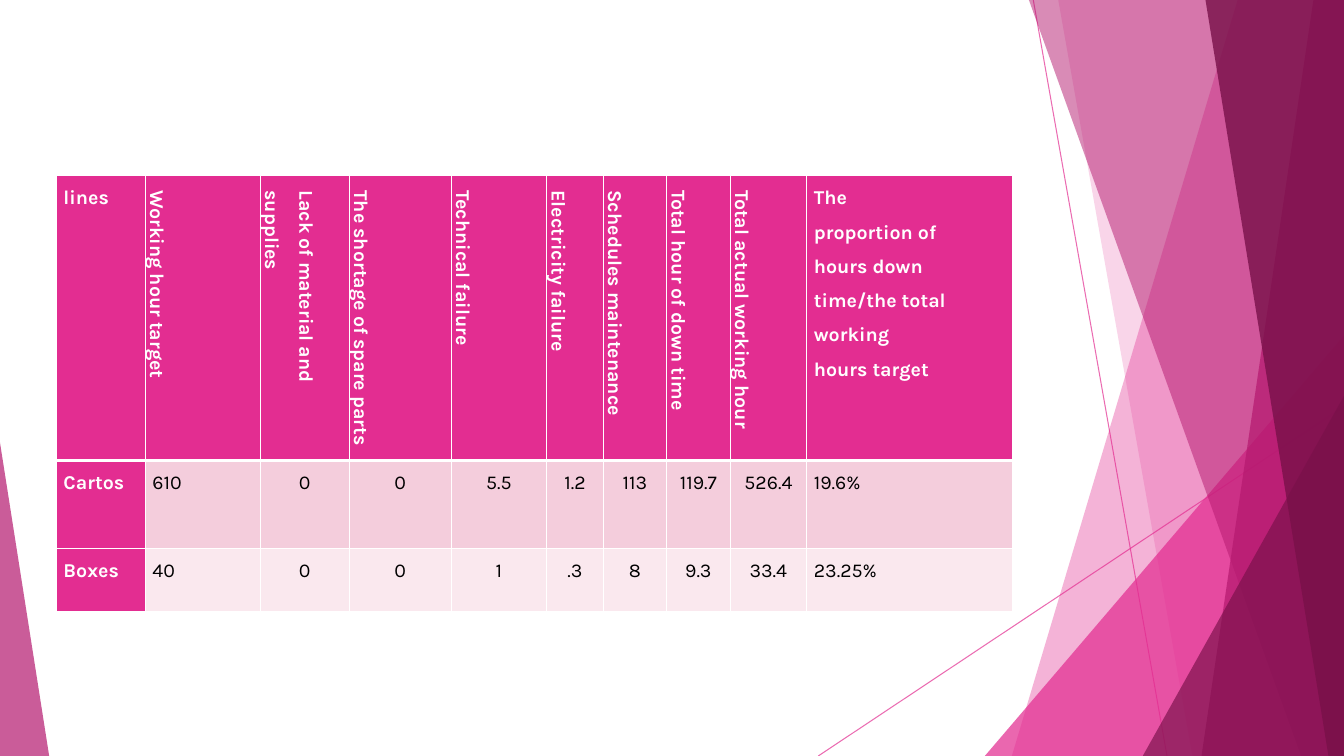
from dataclasses import dataclass

from lxml.etree import SubElement
from pptx import Presentation
from pptx.dml.color import RGBColor
from pptx.enum.shapes import MSO_CONNECTOR as Connector, MSO_SHAPE as Preset
from pptx.enum.text import PP_ALIGN as Align
from pptx.oxml.ns import qn
from pptx.util import Cm, Pt

PAGE_WIDTH, PAGE_HEIGHT = 33.87, 19.05

COLORS = {
    "pink": "E32D91",
    "magenta": "B4186E",
    "plum": "781049",
    "rose": "F4CDDC",
    "blush": "FAE8EE",
    "white": "FFFFFF",
    "black": "000000",
}


@dataclass
class Ray:
    start: tuple[float, float]
    end: tuple[float, float]


@dataclass
class Band:
    top_x: float
    bottom_x: float
    color: str
    opacity: int


@dataclass
class Wedge:
    left: float
    top: float
    width: float
    apex: float
    color: str
    opacity: int


@dataclass
class Column:
    width: float
    heading: str
    values: tuple[str, str]
    vertical: bool = True
    centred: bool = True


@dataclass
class Row:
    height: float
    fill: str


RAYS = [
    Ray((26.04, 0), (29.41, PAGE_HEIGHT)),
    Ray((PAGE_WIDTH, 10.24), (20.62, PAGE_HEIGHT)),
]

FACETS = [
    Band(31.19, 25.5, "pink", 36),
    Band(26.67, 30.05, "pink", 20),
    Wedge(24.82, 8.46, 9.05, 1, "pink", 72),
    Band(25.93, 32.79, "magenta", 50),
    Band(33.1, 30.28, "magenta", 70),
    Band(30.38, 33.48, "plum", 80),
    Wedge(28.8, 9.98, 5.07, 1, "plum", 66),
    Wedge(0, 11.15, 1.24, 0, "magenta", 70),
]

COLUMNS = [
    Column(2.24, "lines", ("Cartos", "Boxes"), False, False),
    Column(2.9, "Working hour target", ("610", "40"), centred=False),
    Column(2.24, "Lack of material and supplies", ("0", "0")),
    Column(2.57, "The shortage of spare parts", ("0", "0")),
    Column(2.41, "Technical failure", ("5.5", "1")),
    Column(1.42, "Electricity failure", ("1.2", ".3")),
    Column(1.6, "Schedules maintenance", ("113", "8")),
    Column(1.6, "Total hour of down time", ("119.7", "9.3")),
    Column(1.93, "Total actual working hour", ("526.4", "33.4")),
    Column(
        5.18,
        "The\nproportion of\nhours down\ntime/the total\nworking\nhours target",
        ("19.6%", "23.25%"),
        False,
        False,
    ),
]

ROWS = [Row(6.5, "pink"), Row(2.21, "rose"), Row(1.6, "blush")]

CELL_FORMAT = {
    "margin_left": Cm(0.18),
    "margin_right": Cm(0.18),
    "margin_top": 0,
    "margin_bottom": 0,
}
FONT_FORMAT = {"name": "Karla", "size": Pt(14)}


def apply_format(target, values: dict) -> None:
    for name, value in values.items():
        setattr(target, name, value)


def paint(fill, color: str, opacity: int = 100) -> None:
    fill.solid()
    fill.fore_color.rgb = RGBColor.from_string(COLORS[color])
    if opacity < 100:
        tint = fill._xPr.find(qn("a:solidFill"))[0]
        SubElement(tint, qn("a:alpha"), val=str(opacity * 1000))


def draw_ray(page, ray: Ray) -> None:
    points = [Cm(value) for value in (*ray.start, *ray.end)]
    connector = page.shapes.add_connector(Connector.STRAIGHT, *points)
    connector.line.width = Pt(0.75)
    paint(connector.line.fill, "pink", 70)
    SubElement(connector._element.spPr, qn("a:effectLst"))


def draw_facet(page, facet: Band | Wedge) -> None:
    if isinstance(facet, Band):
        builder = page.shapes.build_freeform(Cm(facet.top_x), 0)
        corners = [
            (PAGE_WIDTH, 0),
            (PAGE_WIDTH, PAGE_HEIGHT),
            (facet.bottom_x, PAGE_HEIGHT),
        ]
        builder.add_line_segments([(Cm(x), Cm(y)) for x, y in corners], close=True)
        shape = builder.convert_to_shape()
    else:
        frame = (facet.left, facet.top, facet.width, PAGE_HEIGHT - facet.top)
        box = [Cm(value) for value in frame]
        shape = page.shapes.add_shape(Preset.ISOSCELES_TRIANGLE, *box)
        shape.adjustments[0] = facet.apex
    shape.shadow.inherit = False
    shape.line.fill.background()
    paint(shape.fill, facet.color, facet.opacity)


def draw_borders(cell, row_index: int) -> None:
    widths = {"L": 1, "R": 1, "T": 1, "B": 1}
    if row_index < 2:
        widths["TB"[1 - row_index]] = 3
    properties = cell._tc.get_or_add_tcPr()
    for side, width in widths.items():
        border = SubElement(properties, qn(f"a:ln{side}"), w=str(Pt(width)))
        solid = SubElement(border, qn("a:solidFill"))
        SubElement(solid, qn("a:srgbClr"), val=COLORS["white"])


def fill_cell(cell, column: Column, row: Row, row_index: int, is_label: bool) -> None:
    is_header = row_index == 0
    emphasized = is_header or is_label
    cell.text = column.heading if is_header else column.values[row_index - 1]
    apply_format(cell, CELL_FORMAT)
    draw_borders(cell, row_index)
    paint(cell.fill, "pink" if emphasized else row.fill)
    is_vertical = is_header and column.vertical
    if is_vertical:
        cell._tc.get_or_add_tcPr().set("vert", "vert")
    for para in cell.text_frame.paragraphs:
        para.line_spacing = 1.5
        centred = column.centred and not is_header
        para.alignment = Align.CENTER if centred else Align.LEFT
        if is_vertical:
            para._p.get_or_add_pPr().set("marL", str(Cm(0.2)))
        for span in para.runs:
            apply_format(span.font, {**FONT_FORMAT, "bold": emphasized})
            paint(span.font.fill, "white" if emphasized else "black")


def draw_table(page, left: float, top: float) -> None:
    width = sum(column.width for column in COLUMNS)
    height = sum(row.height for row in ROWS)
    box = [Cm(value) for value in (left, top, width, height)]
    table = page.shapes.add_table(len(ROWS), len(COLUMNS), *box).table
    table.horz_banding = False
    for index, column in enumerate(COLUMNS):
        table.columns[index].width = Cm(column.width)
    for row_index, row in enumerate(ROWS):
        table.rows[row_index].height = Cm(row.height)
        for index, column in enumerate(COLUMNS):
            cell = table.cell(row_index, index)
            fill_cell(cell, column, row, row_index, index == 0)


def main() -> None:
    deck = Presentation()
    deck.slide_width, deck.slide_height = Cm(PAGE_WIDTH), Cm(PAGE_HEIGHT)
    page = deck.slides.add_slide(deck.slide_layouts[6])
    for ray in RAYS:
        draw_ray(page, ray)
    for facet in FACETS:
        draw_facet(page, facet)
    draw_table(page, 1.42, 4.42)
    deck.save("out.pptx")


if __name__ == "__main__":
    main()
